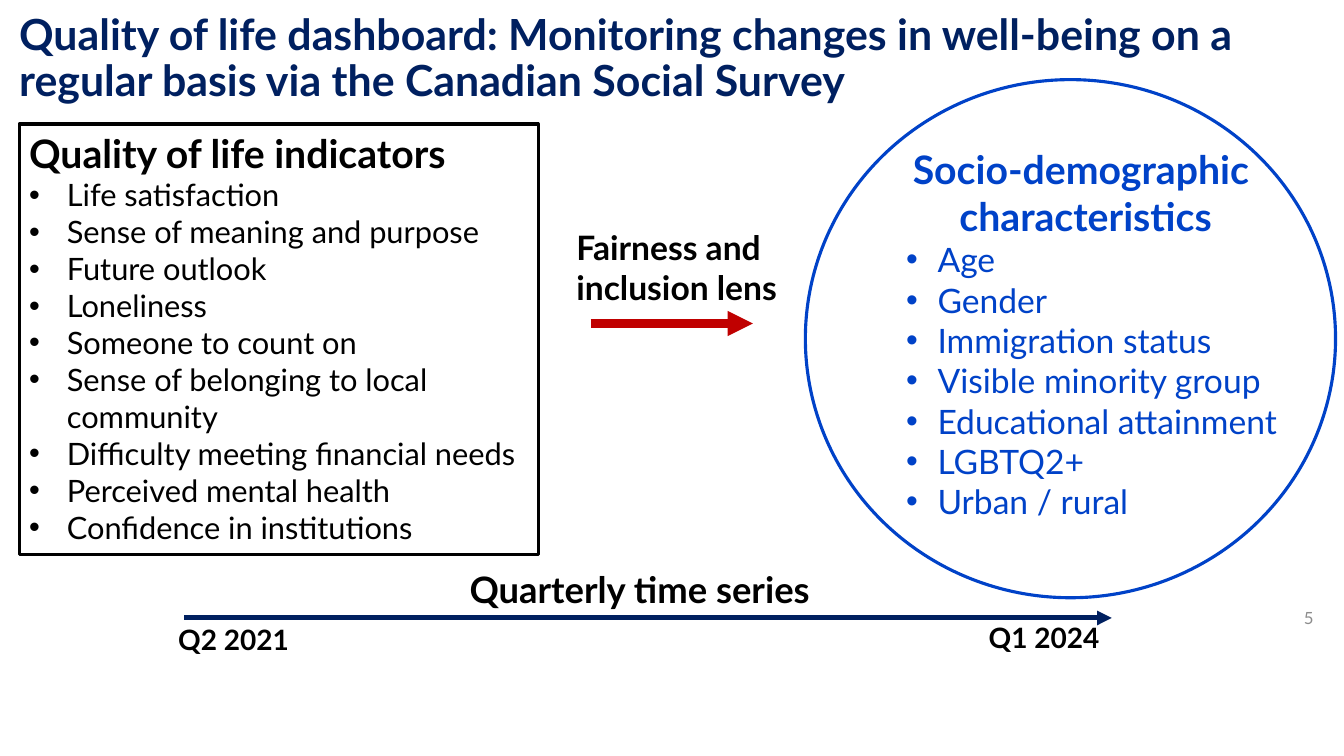
from dataclasses import dataclass

import pptx
import pptx.dml.color
import pptx.enum.shapes
import pptx.enum.text
import pptx.oxml.ns
import pptx.presentation
import pptx.shapes.autoshape
import pptx.shapes.base
import pptx.slide
import pptx.text.text
import pptx.util
from lxml import etree

Pt = pptx.util.Pt
RGBColor = pptx.dml.color.RGBColor
Align = pptx.enum.text.PP_ALIGN
Anchor = pptx.enum.text.MSO_ANCHOR
Shape = pptx.enum.shapes.MSO_SHAPE
qn = pptx.oxml.ns.qn

FONT = "Lato"
NAVY = RGBColor(0x00, 0x20, 0x60)
BLUE = RGBColor(0x00, 0x42, 0xC8)
RED = RGBColor(0xC0, 0x00, 0x00)
BLACK = RGBColor(0x00, 0x00, 0x00)
GREY = RGBColor(0x8C, 0x8C, 0x8C)


@dataclass(frozen=True)
class Box:
    left: float
    top: float
    width: float
    height: float


@dataclass(frozen=True)
class Style:
    size: float
    color: RGBColor = BLACK
    bold: bool = True
    align: Align = Align.LEFT


@dataclass(frozen=True)
class Label:
    text: str
    box: Box
    style: Style
    anchor: Anchor = Anchor.TOP


@dataclass(frozen=True)
class Arrow:
    left: float
    right: float
    y: float
    color: RGBColor
    weight: float


@dataclass(frozen=True)
class BulletList:
    headings: tuple[str, ...]
    items: tuple[str, ...]
    heading_style: Style
    item_style: Style
    margin: float
    hanging: float
    level: int = 0


TITLE = Label(
    "Quality of life dashboard: Monitoring changes in well-being on a "
    "regular basis via the Canadian Social Survey",
    Box(6.5, 5, 894.2, 75.6), Style(30.6, NAVY), Anchor.MIDDLE)

DATE_STYLE = Style(20)
LABELS = (
    Label("5", Box(729.4, 427, 216, 28.8),
          Style(12, GREY, False, Align.RIGHT), Anchor.MIDDLE),
    Label("Quarterly time series", Box(328.3, 401.8, 275.8, 38.9), Style(26)),
    Label("Fairness and inclusion lens", Box(404.6, 158.4, 170.6, 65.5), Style(24)),
    Label("Q2 2021", Box(120.2, 441.4, 190.1, 31.7), DATE_STYLE),
    Label("Q1 2024", Box(699.1, 439.9, 190.1, 31.7), DATE_STYLE),
)

ARROWS = (
    Arrow(131.8, 794.2, 441.4, NAVY, 3.5),
    Arrow(421.9, 537.8, 231.1, RED, 6),
)

INDICATORS_BOX = Box(13.7, 88.6, 370.8, 307.4)
INDICATORS = BulletList(
    ("Quality of life indicators",),
    ("Life satisfaction", "Sense of meaning and purpose", "Future outlook",
     "Loneliness", "Someone to count on", "Sense of belonging to local community",
     "Difficulty meeting financial needs", "Perceived mental health",
     "Confidence in institutions"),
    Style(28), Style(22, bold=False), 27, 27)

CIRCLE_BOX = Box(575.3, 56.9, 378.7, 370.1)
CHARACTERISTICS_BOX = Box(604.1, 100.1, 342.7, 278.6)
CHARACTERISTICS = BulletList(
    ("Socio-demographic ", "characteristics"),
    ("Age", "Gender", "Immigration status", "Visible minority group",
     "Educational attainment", "LGBTQ2+", "Urban / rural"),
    Style(28, BLUE, align=Align.CENTER), Style(24, BLUE, False), 58.5, 22.5, 1)


def place(shape: pptx.shapes.base.BaseShape, box: Box) -> None:
    shape.left, shape.top = Pt(box.left), Pt(box.top)
    shape.width, shape.height = Pt(box.width), Pt(box.height)


def format_paragraph(paragraph: pptx.text.text._Paragraph, style: Style) -> None:
    paragraph.alignment = style.align
    for run in paragraph.runs:
        run.font.name = FONT
        run.font.size = Pt(style.size)
        run.font.bold = style.bold
        run.font.color.rgb = style.color


def write_label(shape: pptx.shapes.autoshape.Shape, label: Label) -> None:
    frame = shape.text_frame
    frame.word_wrap = True
    frame.vertical_anchor = label.anchor
    frame.text = label.text
    format_paragraph(frame.paragraphs[0], label.style)


def add_bullet(paragraph: pptx.text.text._Paragraph, margin: float, hanging: float) -> None:
    properties = paragraph._p.get_or_add_pPr()
    properties.set("marL", str(Pt(margin)))
    properties.set("indent", str(-Pt(hanging)))
    etree.SubElement(properties, qn("a:buFont"), typeface="Arial")
    etree.SubElement(properties, qn("a:buChar"), char="•")


def write_list(shape: pptx.shapes.autoshape.Shape, content: BulletList) -> None:
    frame = shape.text_frame
    frame.text = "\n".join(content.headings + content.items)
    frame.word_wrap = True
    frame.vertical_anchor = Anchor.TOP
    for index, paragraph in enumerate(frame.paragraphs):
        if index < len(content.headings):
            format_paragraph(paragraph, content.heading_style)
        else:
            paragraph.level = content.level
            add_bullet(paragraph, content.margin, content.hanging)
            format_paragraph(paragraph, content.item_style)


def add_outline(slide: pptx.slide.Slide, kind: Shape, box: Box,
                color: RGBColor) -> pptx.shapes.autoshape.Shape:
    outline = slide.shapes.add_shape(kind, 0, 0, 0, 0)
    place(outline, box)
    outline.shadow.inherit = False
    outline.fill.background()
    outline.line.color.rgb = color
    outline.line.width = Pt(2.25)
    return outline


def add_arrow(slide: pptx.slide.Slide, arrow: Arrow) -> None:
    connector = slide.shapes.add_connector(
        pptx.enum.shapes.MSO_CONNECTOR.STRAIGHT,
        Pt(arrow.left), Pt(arrow.y), Pt(arrow.right), Pt(arrow.y))
    connector.line.color.rgb = arrow.color
    connector.line.width = Pt(arrow.weight)
    etree.SubElement(connector.line._get_or_add_ln(), qn("a:tailEnd"), type="triangle")
    etree.SubElement(connector._element.spPr, qn("a:effectLst"))


def add_text_box(slide: pptx.slide.Slide, box: Box) -> pptx.shapes.autoshape.Shape:
    text_box = slide.shapes.add_textbox(0, 0, 0, 0)
    place(text_box, box)
    return text_box


def main() -> None:
    presentation = pptx.Presentation()
    presentation.slide_width, presentation.slide_height = Pt(960), Pt(540)
    slide = presentation.slides.add_slide(presentation.slide_layouts[5])

    title = slide.shapes.title
    place(title, TITLE.box)
    write_label(title, TITLE)
    title.text_frame.paragraphs[0].line_spacing = 0.9

    add_outline(slide, Shape.OVAL, CIRCLE_BOX, BLUE)
    write_list(add_text_box(slide, CHARACTERISTICS_BOX), CHARACTERISTICS)
    write_list(add_outline(slide, Shape.RECTANGLE, INDICATORS_BOX, BLACK), INDICATORS)
    for arrow in ARROWS:
        add_arrow(slide, arrow)
    for label in LABELS:
        write_label(add_text_box(slide, label.box), label)

    presentation.save("out.pptx")


if __name__ == "__main__":
    main()
